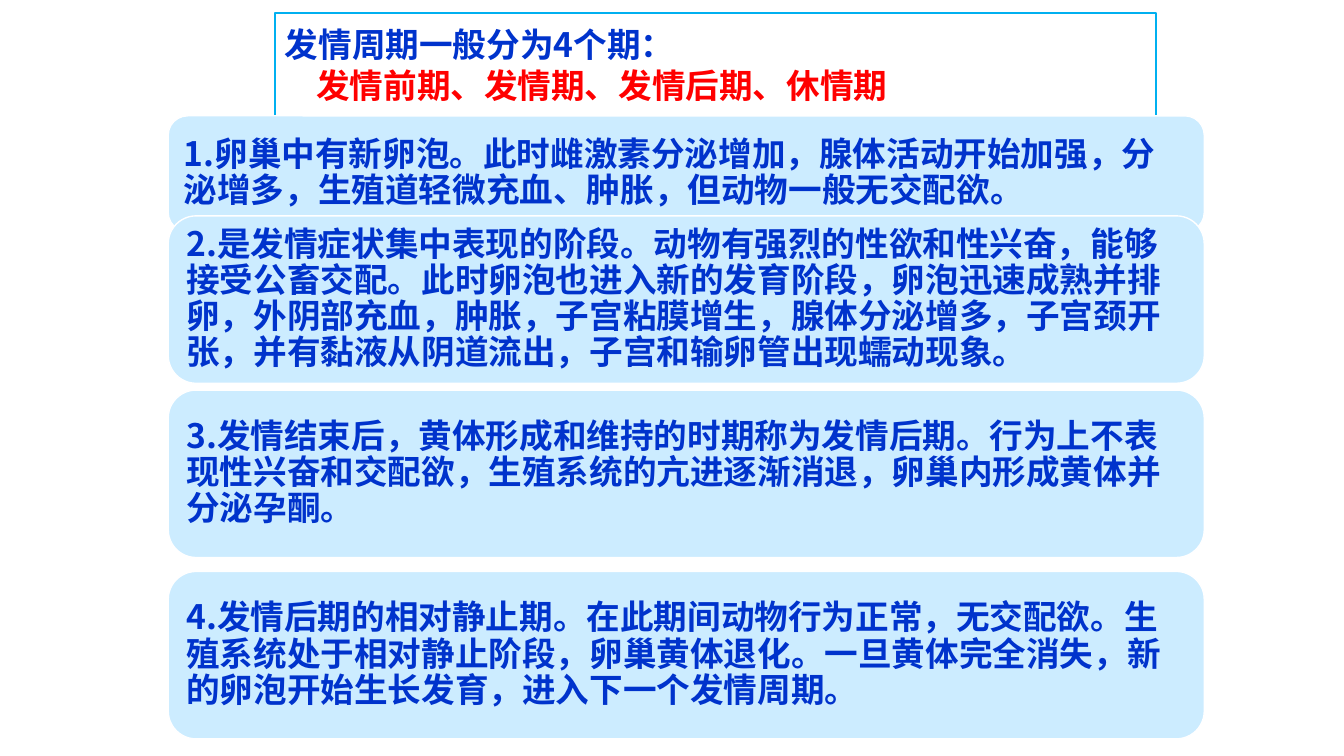
"""Build the slide on the four phases of the estrous cycle."""
import pptx
import pptx.util
import pptx.dml.color
import pptx.enum.shapes
import pptx.enum.text
import pptx.oxml.ns
import lxml.etree

Cm, Pt = pptx.util.Cm, pptx.util.Pt
RGBColor = pptx.dml.color.RGBColor
SHAPE = pptx.enum.shapes.MSO_SHAPE

BLUE = RGBColor(0x00, 0x33, 0xCC)
RED = RGBColor(0xFF, 0x00, 0x00)
PALE_BLUE = RGBColor(0xCC, 0xEC, 0xFF)
SKY = RGBColor(0x00, 0xB0, 0xF0)
WHITE = RGBColor(0xFF, 0xFF, 0xFF)

PHASES = [
    (2.92, 2.92, "1.卵巢中有新卵泡。此时雌激素分泌增加，腺体活动开始加强，分泌增多，生殖道轻微充血、肿胀，但动物一般无交配欲。"),
    (5.44, 4.22, "2.是发情症状集中表现的阶段。动物有强烈的性欲和性兴奋，能够接受公畜交配。此时卵泡也进入新的发育阶段，卵泡迅速成熟并排卵，外阴部充血，肿胀，子宫粘膜增生，腺体分泌增多，子宫颈开张，并有黏液从阴道流出，子宫和输卵管出现蠕动现象。"),
    (9.83, 4.22, "3.发情结束后，黄体形成和维持的时期称为发情后期。行为上不表现性兴奋和交配欲，生殖系统的亢进逐渐消退，卵巢内形成黄体并分泌孕酮。"),
    (14.4, 4.22, "4.发情后期的相对静止期。在此期间动物行为正常，无交配欲。生殖系统处于相对静止阶段，卵巢黄体退化。一旦黄体完全消失，新的卵泡开始生长发育，进入下一个发情周期。"),
]


class Deck:
    font = {"name": "Noto Sans CJK SC", "size": Pt(24), "bold": True}
    card_margins = dict.fromkeys(
        ("margin_left", "margin_top", "margin_right", "margin_bottom"), Cm(0.25))
    card_spacing = {"line_spacing": 0.9, "space_after": Pt(8.4)}

    def __init__(self):
        self.prs = pptx.Presentation()
        self.apply(self.prs, {"slide_width": Cm(33.87), "slide_height": Cm(19.05)})
        self.s = self.prs.slides.add_slide(self.prs.slide_layouts[6])

    def apply(self, target, values):
        for name, value in values.items():
            setattr(target, name, value)

    def box(self, kind, left, top, width, height, line, fill=None):
        sp = self.s.shapes.add_shape(kind, Cm(left), Cm(top), Cm(width), Cm(height))
        sp.shadow.inherit = False
        if fill is None:
            sp.fill.background()
        else:
            sp.fill.solid()
            sp.fill.fore_color.rgb = fill
        sp.line.color.rgb = line
        sp.line.width = Pt(1)
        tf = sp.text_frame
        self.apply(tf, {"word_wrap": True,
                        "vertical_anchor": pptx.enum.text.MSO_ANCHOR.MIDDLE})
        return tf

    def add_text(self, p, text, color):
        p.alignment = pptx.enum.text.PP_ALIGN.LEFT
        r = p.add_run()
        r.text = text
        self.apply(r.font, self.font)
        r.font.color.rgb = color
        ea = lxml.etree.SubElement(r.font._element, pptx.oxml.ns.qn("a:ea"))
        ea.set("typeface", self.font["name"])

    def heading(self, title, phases):
        tf = self.box(SHAPE.RECTANGLE, 6.93, 0.33, 22.2, 2.59, SKY)
        self.add_text(tf.paragraphs[0], title, BLUE)
        p = tf.add_paragraph()
        p._p.get_or_add_pPr().set("marL", str(Cm(0.79)))
        self.add_text(p, phases, RED)

    def card(self, top, height, text):
        tf = self.box(SHAPE.ROUNDED_RECTANGLE, 4.24, top, 26.11, height, WHITE, PALE_BLUE)
        self.apply(tf, self.card_margins)
        p = tf.paragraphs[0]
        self.apply(p, self.card_spacing)
        self.add_text(p, text, BLUE)


def main():
    deck = Deck()
    deck.heading("发情周期一般分为4个期：", "发情前期、发情期、发情后期、休情期")
    for top, height, text in PHASES:
        deck.card(top, height, text)
    deck.prs.save("out.pptx")


if __name__ == "__main__":
    main()
